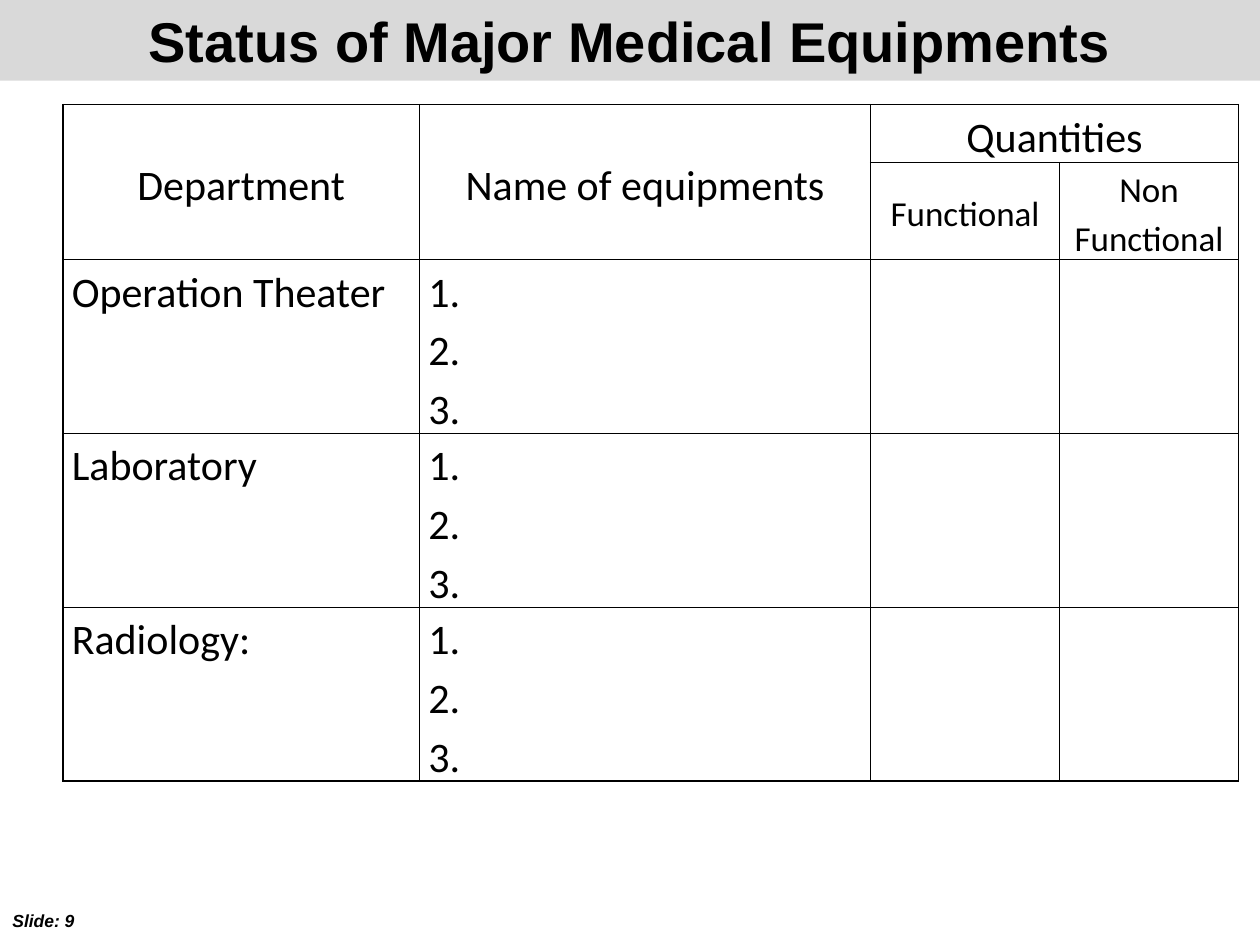
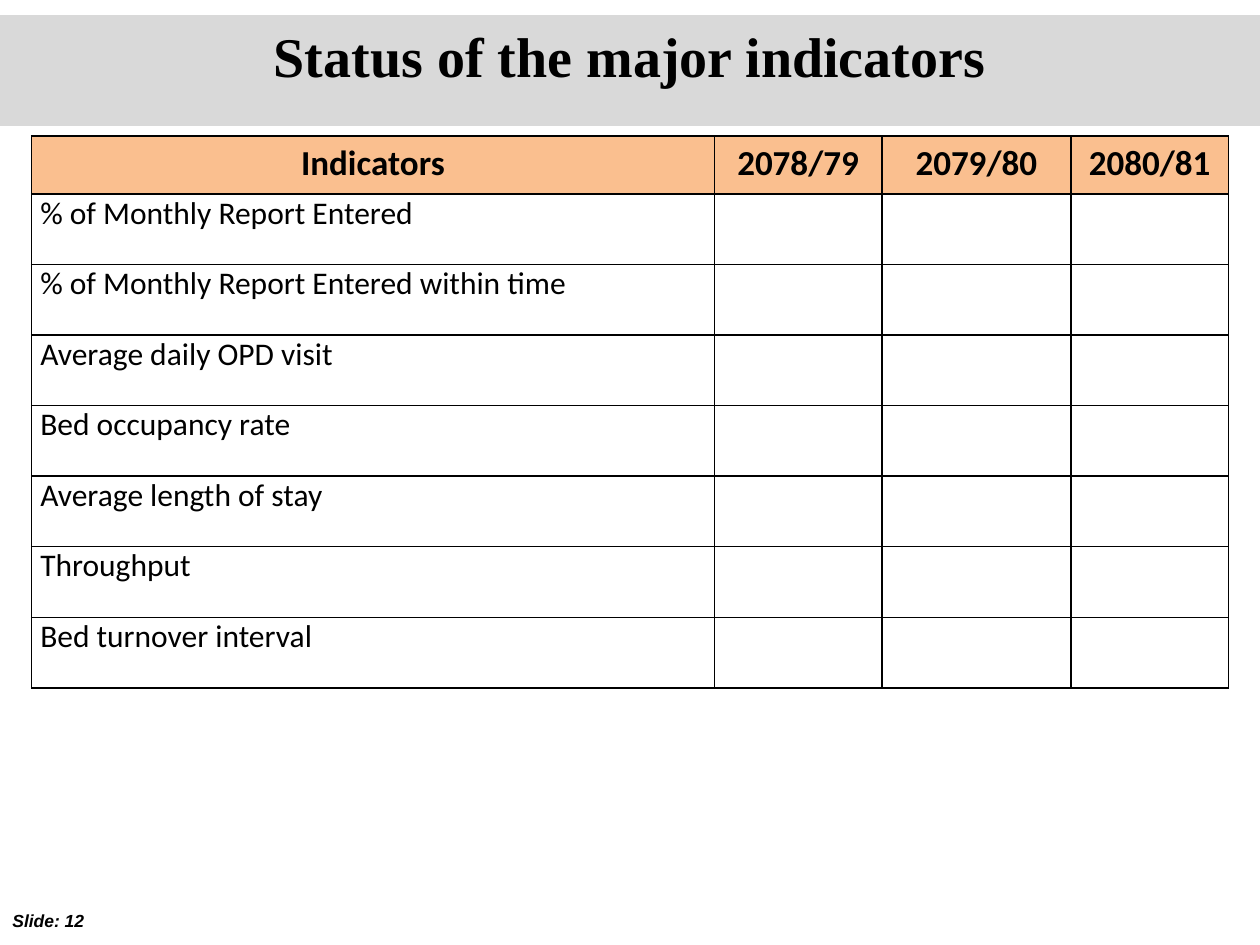
"""Build two hospital status slides: medical equipment and major indicators."""
from lxml import etree
from pptx import Presentation
from pptx.dml.color import RGBColor
from pptx.enum.shapes import MSO_SHAPE
from pptx.enum.text import MSO_ANCHOR, PP_ALIGN
from pptx.oxml.ns import qn
from pptx.util import Inches, Pt

RECT = MSO_SHAPE.RECTANGLE
TOP, MIDDLE = MSO_ANCHOR.TOP, MSO_ANCHOR.MIDDLE
LEFT, CENTER = PP_ALIGN.LEFT, PP_ALIGN.CENTER
COLORS = {"text": "000000", "border": "000000", "band": "D9D9D9", "header": "FABF8F"}


def write(tf, text, size, font="Calibri", bold=False, italic=False, align=LEFT, spacing=1.0):
    tf.text = text
    for p in tf.paragraphs:
        p.alignment = align
        p.line_spacing = spacing
        for r in p.runs:
            r.font.name = font
            r.font.size = Pt(size)
            r.font.bold = bold
            r.font.italic = italic
            r.font.color.rgb = RGBColor.from_string(COLORS["text"])


def add_grid(s, left, top, widths, heights):
    frame = s.shapes.add_table(len(heights), len(widths), Inches(left), Inches(top),
                               Inches(sum(widths)), Inches(sum(heights)))
    table = frame.table
    table.first_row = table.horz_banding = False
    for column, width in zip(table.columns, widths):
        column.width = Inches(width)
    for row, height in zip(table.rows, heights):
        row.height = Inches(height)
    for cell in table.iter_cells():
        cell.margin_left = cell.margin_right = Inches(0.07)
        cell.margin_top = cell.margin_bottom = 0
        tcPr = cell._tc.get_or_add_tcPr()
        for side in ("a:lnL", "a:lnR", "a:lnT", "a:lnB"):
            ln = etree.SubElement(tcPr, qn(side), w=str(Pt(1)))
            fill = etree.SubElement(ln, qn("a:solidFill"))
            etree.SubElement(fill, qn("a:srgbClr"), val=COLORS["border"])
        cell.fill.background()
    return table


prs = Presentation()
prs.slide_width, prs.slide_height = Inches(10), Inches(7.5)

pages = [
    ("Status of Major Medical Equipments", "Arial", 0, 0.64, 9),
    ("Status of the major indicators", "Times New Roman", 0.12, 0.88, 12),
]
slides = []
for title, font, top, height, number in pages:
    s = prs.slides.add_slide(prs.slide_layouts[6])
    slides.append(s)
    band = s.shapes.add_shape(RECT, 0, Inches(top), prs.slide_width, Inches(height))
    band.shadow.inherit = False
    band.fill.solid()
    band.fill.fore_color.rgb = RGBColor.from_string(COLORS["band"])
    band.line.fill.background()
    band.text_frame.vertical_anchor = TOP
    band.text_frame.word_wrap = True
    write(band.text_frame, title, 32, font, bold=True, align=CENTER)
    footer = s.shapes.add_textbox(0, Inches(7.17), Inches(0.92), Inches(0.27))
    footer.text_frame.word_wrap = True
    write(footer.text_frame, f"Slide: {number}", 10, "Arial", bold=True, italic=True)

equipment = add_grid(slides[0], 0.5, 0.83, [2.83, 3.58, 1.5, 1.42],
                     [0.46, 0.77, 1.38, 1.38, 1.38])
for first, last in [((0, 0), (1, 0)), ((0, 1), (1, 1)), ((0, 2), (0, 3))]:
    equipment.cell(*first).merge(equipment.cell(*last))
headings = [
    (0, 0, "Department", 24),
    (0, 1, "Name of equipments", 24),
    (0, 2, "Quantities", 24),
    (1, 2, "Functional", 20),
    (1, 3, "Non Functional", 20),
]
for row, col, text, size in headings:
    cell = equipment.cell(row, col)
    cell.vertical_anchor = MIDDLE
    write(cell.text_frame, text, size, align=CENTER, spacing=1.15)
for row, department in enumerate(["Operation Theater", "Laboratory", "Radiology:"], 2):
    write(equipment.cell(row, 0).text_frame, department, 24, spacing=1.15)
    write(equipment.cell(row, 1).text_frame, "1.\n2.\n3.", 24, spacing=1.15)

indicators = [
    "% of Monthly Report Entered",
    "% of Monthly Report Entered within time",
    "Average daily OPD visit",
    "Bed occupancy rate",
    "Average length of stay",
    "Throughput",
    "Bed turnover interval",
]
status = add_grid(slides[1], 0.25, 1.08, [5.42, 1.33, 1.5, 1.25],
                  [0.46] + [0.56] * len(indicators))
for col, heading in enumerate(["Indicators", "2078/79", "2079/80", "2080/81"]):
    cell = status.cell(0, col)
    cell.fill.solid()
    cell.fill.fore_color.rgb = RGBColor.from_string(COLORS["header"])
    write(cell.text_frame, heading, 20, bold=True, align=CENTER, spacing=1.15)
for row, indicator in enumerate(indicators, 1):
    write(status.cell(row, 0).text_frame, indicator, 18)

prs.save("out.pptx")
